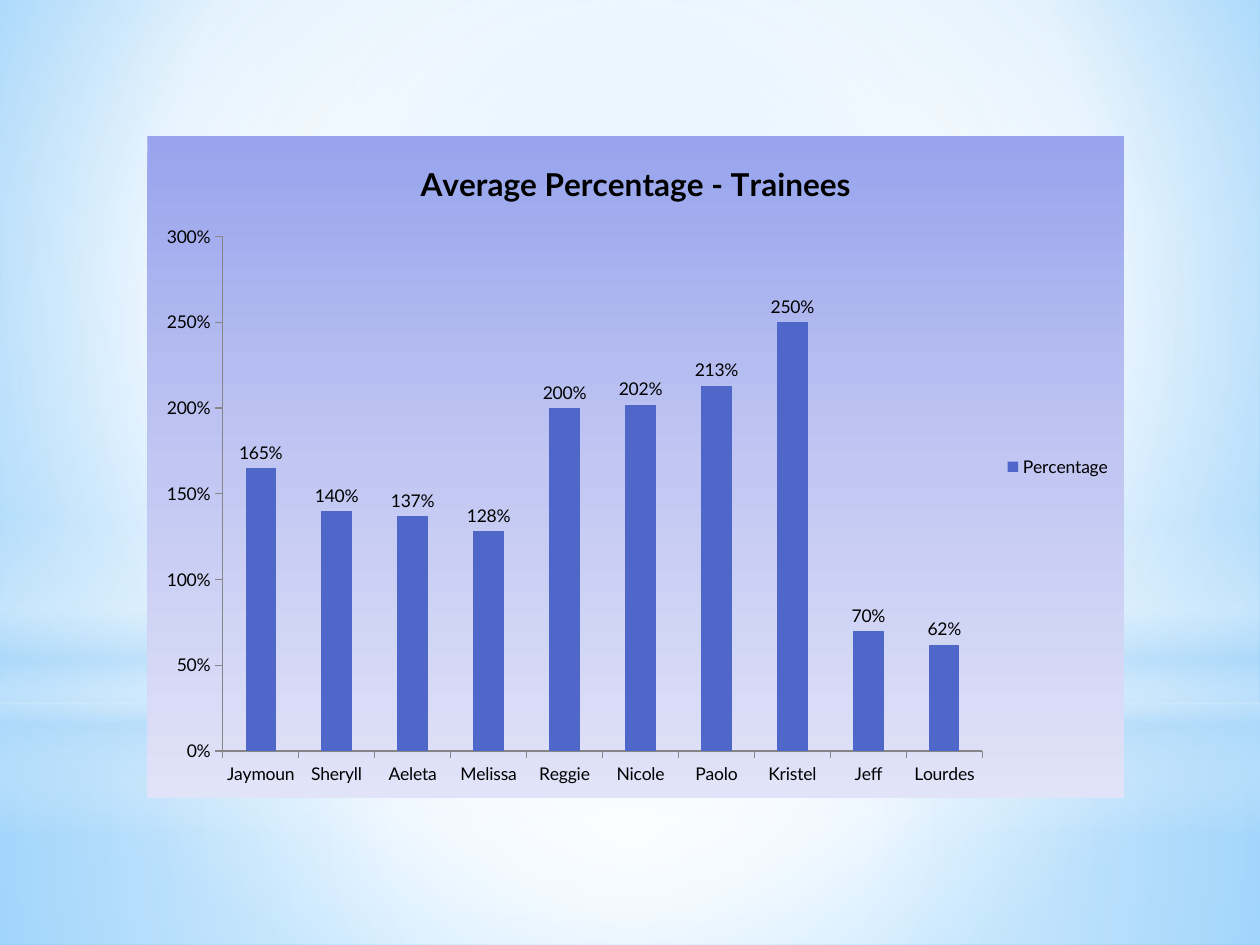
from lxml import etree
from pptx import Presentation
from pptx.chart.data import CategoryChartData
from pptx.dml.color import RGBColor
from pptx.enum.chart import XL_CHART_TYPE, XL_LABEL_POSITION, XL_LEGEND_POSITION, XL_TICK_MARK
from pptx.enum.shapes import MSO_SHAPE
from pptx.oxml.ns import qn
from pptx.util import Inches, Pt

COLUMNS = XL_CHART_TYPE.COLUMN_CLUSTERED
ABOVE_BAR = XL_LABEL_POSITION.OUTSIDE_END
RIGHT = XL_LEGEND_POSITION.RIGHT
TICK_OUT = XL_TICK_MARK.OUTSIDE
RECTANGLE, OVAL = MSO_SHAPE.RECTANGLE, MSO_SHAPE.OVAL

BLACK = RGBColor(0x00, 0x00, 0x00)
WHITE = RGBColor(0xFF, 0xFF, 0xFF)
PALE_BLUE = RGBColor(0xB4, 0xDC, 0xFA)
SKY = RGBColor(0x9E, 0xD5, 0xFF)
DEEP_SKY = RGBColor(0x5B, 0xB9, 0xFF)
BAR_BLUE = RGBColor(0x4E, 0x67, 0xC8)
AXIS_GRAY = RGBColor(0x86, 0x86, 0x86)
PANEL_TOP = RGBColor(0x98, 0xA4, 0xED)
PANEL_MIDDLE = RGBColor(0xC1, 0xC7, 0xF2)
PANEL_BOTTOM = RGBColor(0xE1, 0xE3, 0xF8)
FONT = "Lato"
CENTER = (50, 50, 50, 50)


def gradient_fill(stops, focus=None):
    """Stops are (position %, colour, opacity %); without a focus it runs downwards."""
    gradient = etree.Element(qn("a:gradFill"), rotWithShape="1")
    stop_list = etree.SubElement(gradient, qn("a:gsLst"))
    for position, color, opacity in stops:
        stop = etree.SubElement(stop_list, qn("a:gs"), pos=str(position * 1000))
        rgb = etree.SubElement(stop, qn("a:srgbClr"), val=str(color))
        if opacity < 100:
            etree.SubElement(rgb, qn("a:alpha"), val=str(opacity * 1000))
    if focus:
        circle = etree.SubElement(gradient, qn("a:path"), path="circle")
        sides = {side: str(inset * 1000) for side, inset in zip("ltrb", focus)}
        etree.SubElement(circle, qn("a:fillToRect"), sides)
    else:
        etree.SubElement(gradient, qn("a:lin"), ang="5400000", scaled="0")
    return gradient


def apply_gradient(owner, gradient):
    """Put the gradient in place of the owner's solid fill."""
    owner.fill.solid()
    owner.fill.fore_color.rgb = WHITE
    solid = next(owner_element.iter(qn("a:solidFill"))) if (
        owner_element := getattr(owner, "element", None)) is not None else next(
        slide.element.iter(qn("a:solidFill")))
    solid.getparent().replace(solid, gradient)


prs = Presentation()
prs.slide_width, prs.slide_height = Inches(10), Inches(7.5)
slide = prs.slides.add_slide(prs.slide_layouts[6])

# Background glow and wave bands
apply_gradient(slide.background, gradient_fill(
    [(0, SKY, 100), (60, WHITE, 100), (100, DEEP_SKY, 100)], focus=(20, 10, 20, 60)))

glows = [
    (RECTANGLE, 5.58, 1.92, [(0, WHITE, 91), (37, WHITE, 76), (100, PALE_BLUE, 79)], CENTER),
    (RECTANGLE, 0, 5.58, [(0, WHITE, 89), (48, WHITE, 62), (100, PALE_BLUE, 79)], CENTER),
    (RECTANGLE, 4.12, 2.5, [(0, WHITE, 0), (29, WHITE, 30), (45, PALE_BLUE, 40),
                            (55, WHITE, 26), (65, PALE_BLUE, 60), (100, WHITE, 0)], None),
    (OVAL, 1.75, 5.58, [(0, WHITE, 100), (56, WHITE, 0)], CENTER),
]
for outline, top, height, stops, focus in glows:
    glow = slide.shapes.add_shape(outline, 0, Inches(top), Inches(10), Inches(height))
    glow.shadow.inherit = False
    glow.line.fill.background()
    apply_gradient(glow, gradient_fill(stops, focus))

# Trainee chart
averages = {
    "Jaymoun": 1.65, "Sheryll": 1.4, "Aeleta": 1.37, "Melissa": 1.28, "Reggie": 2,
    "Nicole": 2.02, "Paolo": 2.13, "Kristel": 2.5, "Jeff": 0.7, "Lourdes": 0.62,
}
trainee_data = CategoryChartData(number_format="0%")
trainee_data.categories = list(averages)
trainee_data.add_series("Percentage", list(averages.values()))
chart = slide.shapes.add_chart(
    COLUMNS, Inches(1.17), Inches(1.08), Inches(7.75), Inches(5.25), trainee_data).chart
chart.font.name = FONT
chart.font.size = Pt(10)
chart.font.color.rgb = BLACK

chart.has_title = True
heading = chart.chart_title.text_frame
heading.text = "Average Percentage - Trainees"
heading_font = heading.paragraphs[0].runs[0].font
heading_font.name = FONT
heading_font.size = Pt(18)
heading_font.bold = True
heading_font.color.rgb = BLACK

chart.has_legend = True
chart.legend.position = RIGHT
chart.legend.include_in_layout = False

for axis in (chart.category_axis, chart.value_axis):
    axis.major_tick_mark = TICK_OUT
    axis.has_major_gridlines = False
    axis.format.line.color.rgb = AXIS_GRAY
    axis.format.line.width = Pt(0.75)
chart.value_axis.minimum_scale = 0
chart.value_axis.maximum_scale = 3
chart.value_axis.major_unit = 0.5
chart.value_axis.tick_labels.number_format = "0%"
chart.value_axis.tick_labels.number_format_is_linked = False

plot = chart.plots[0]
plot.gap_width = 150
plot.vary_by_categories = False
bars = plot.series[0]
bars.format.fill.solid()
bars.format.fill.fore_color.rgb = BAR_BLUE
plot.has_data_labels = True
labels = plot.data_labels
labels.show_value = True
labels.number_format = "0%"
labels.number_format_is_linked = False
labels.position = ABOVE_BAR

# Chart panel: its fill stands before the chart's text properties
panel = etree.Element(qn("c:spPr"))
panel.append(gradient_fill(
    [(0, PANEL_TOP, 100), (50, PANEL_MIDDLE, 100), (100, PANEL_BOTTOM, 100)]))
panel_border = etree.SubElement(panel, qn("a:ln"))
etree.SubElement(panel_border, qn("a:noFill"))
chart.element.find(qn("c:txPr")).addprevious(panel)

prs.save("out.pptx")
